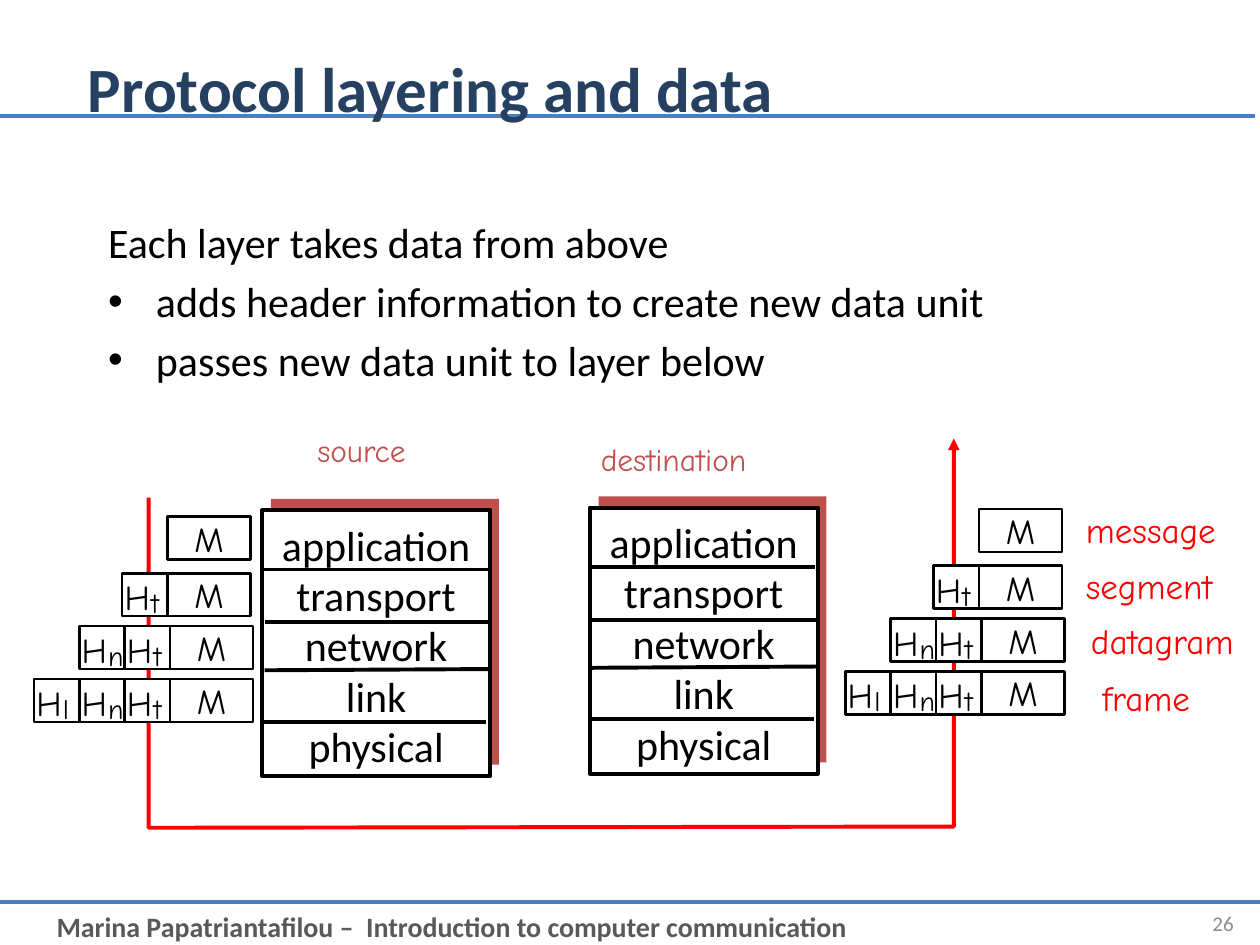
"""Build the slide on protocol layering and data units."""
from lxml.etree import SubElement
from pptx import Presentation
from pptx.dml.color import RGBColor
from pptx.enum.shapes import MSO_CONNECTOR, MSO_SHAPE
from pptx.enum.text import MSO_ANCHOR, PP_ALIGN
from pptx.oxml.ns import qn
from pptx.util import Inches, Pt

COLORS = {
    "rule": "4B7EBC", "title": "254061", "footer": "595959", "number": "8C8C8C",
    "black": "000000", "white": "FFFFFF", "accent": "C0504D", "flow": "FF0000",
}
BODY_FONT, HAND_FONT = "Calibri", "Comic Neue"
LAYERS = ["application", "transport", "network", "link", "physical"]
DIVIDERS = [(0, 0.47, 1.79, 0.47), (0.02, 0.89, 1.82, 0.89),
            (0.02, 1.27, 1.82, 1.26), (0, 1.68, 1.78, 1.68)]
DATA_UNITS = [(0, 0, ""), (0, 0.45, "t"), (0.02, 0.87, "tn"), (0.02, 1.29, "tnl")]
UNIT_NAMES = [("message", 8.52, 3.99), ("segment", 8.52, 4.43),
              ("datagram", 8.56, 4.87), ("frame", 8.65, 5.32)]
HEADER_WIDTH, PAYLOAD_WIDTH, CELL_HEIGHT = 0.36, 0.66, 0.34


def rgb(color):
    return RGBColor.from_string(COLORS[color])


def write(frame, lines, size, color, font=BODY_FONT, bold=False,
          align=PP_ALIGN.LEFT, anchor=MSO_ANCHOR.TOP, wrap=True):
    """Fill a text frame with one paragraph per line."""
    frame.word_wrap = wrap
    frame.vertical_anchor = anchor
    for index, line in enumerate(lines):
        paragraph = frame.add_paragraph() if index else frame.paragraphs[0]
        paragraph.text = line
        paragraph.alignment = align
        paragraph.font.size = Pt(size)
        paragraph.font.name = font
        paragraph.font.bold = bold
        paragraph.font.color.rgb = rgb(color)


def add_text(shapes, box, lines, size, color, **style):
    label = shapes.add_textbox(*map(Inches, box))
    write(label.text_frame, lines, size, color, **style)
    return label


def add_box(shapes, box, fill, line_width=None):
    rectangle = shapes.add_shape(MSO_SHAPE.RECTANGLE, *map(Inches, box))
    rectangle.shadow.inherit = False
    rectangle.fill.solid()
    rectangle.fill.fore_color.rgb = rgb(fill)
    if line_width:
        rectangle.line.color.rgb = rgb("black")
        rectangle.line.width = Pt(line_width)
    else:
        rectangle.line.fill.background()
    return rectangle


def add_line(shapes, ends, color):
    rule = shapes.add_connector(MSO_CONNECTOR.STRAIGHT, *map(Inches, ends))
    rule.line.color.rgb = rgb(color)
    rule.line.width = Pt(2.25)
    SubElement(rule._element.spPr, qn("a:effectLst"))


def add_body(shapes):
    body = add_text(shapes, (0.76, 1.67, 8.5, 1.66), [
        "Each layer takes data from above",
        "adds header information to create new data unit",
        "passes new data unit to layer below",
    ], 24, "black")
    for index, paragraph in enumerate(body.text_frame.paragraphs):
        paragraph.space_before = Pt(4.8)
        properties = paragraph._p.get_or_add_pPr()
        properties.set("marL", str(Inches(0.38)))
        properties.set("indent", str(Inches(-0.38)))
        if index:
            SubElement(properties, qn("a:buFont")).set("typeface", "Arial")
            SubElement(properties, qn("a:buChar")).set("char", "•")
            defaults = properties.find(qn("a:defRPr"))
            if defaults is not None:
                properties.append(defaults)


def add_stack(slide, left, top):
    """Draw the five protocol layers of one host."""
    shapes = slide.shapes.add_group_shape().shapes
    add_box(shapes, (left + 0.07, top - 0.09, 1.81, 2.11), "accent")
    add_box(shapes, (left, top, 1.81, 2.11), "white", 2.25)
    for x1, y1, x2, y2 in DIVIDERS:
        add_line(shapes, (left + x1, top + y1, left + x2, top + y2), "black")
    add_text(shapes, (left + 0.05, top + 0.02, 1.71, 2.12), LAYERS, 24, "black",
             align=PP_ALIGN.CENTER, wrap=False)


def add_header(shapes, left, top, subscript):
    add_box(shapes, (left, top, HEADER_WIDTH, CELL_HEIGHT), "white", 1.5)
    add_text(shapes, (left - 0.08, top - 0.03, 0.34, 0.43), ["H"], 20, "black",
             font=HAND_FONT)
    add_text(shapes, (left + 0.13, top + 0.05, 0.32, 0.37), [subscript], 16, "black",
             font=HAND_FONT)


def add_data_units(slide, left, top):
    """Draw the message with the headers that each layer puts before it."""
    shapes = slide.shapes.add_group_shape().shapes
    for dx, dy, _ in DATA_UNITS:
        payload = add_box(shapes, (left + dx, top + dy, PAYLOAD_WIDTH, CELL_HEIGHT),
                          "white", 1.5)
        write(payload.text_frame, ["M"], 20, "black", font=HAND_FONT,
              align=PP_ALIGN.CENTER, anchor=MSO_ANCHOR.MIDDLE, wrap=False)
    for dx, dy, headers in DATA_UNITS:
        for count, subscript in enumerate(headers, 1):
            add_header(shapes, left + dx - count * HEADER_WIDTH, top + dy, subscript)


def add_flow(shapes):
    """Draw the way of the data down the source and up the destination."""
    start, *bends = [(Inches(x), Inches(y)) for x, y in
                     [(1.18, 3.95), (1.18, 6.57), (7.57, 6.56), (7.57, 3.48)]]
    builder = shapes.build_freeform(*start)
    builder.add_line_segments(bends, close=False)
    flow = builder.convert_to_shape()
    flow.shadow.inherit = False
    flow.fill.background()
    flow.line.color.rgb = rgb("flow")
    flow.line.width = Pt(2.25)
    SubElement(flow.line._get_or_add_ln(), qn("a:tailEnd")).set("type", "triangle")


def main():
    presentation = Presentation()
    presentation.slide_width, presentation.slide_height = Inches(10), Inches(7.5)
    slide = presentation.slides.add_slide(presentation.slide_layouts[6])
    shapes = slide.shapes

    add_line(shapes, (0, 7.16, 10, 7.16), "rule")
    add_text(shapes, (0.35, 7.17, 9.25, 0.37),
             ["Marina Papatriantafilou –  Introduction to computer communication"],
             16, "footer", bold=True)
    add_line(shapes, (-0.04, 0.92, 9.96, 0.92), "rule")
    add_text(shapes, (9.09, 7.13, 0.8, 0.4), ["26"], 12, "number",
             align=PP_ALIGN.RIGHT, anchor=MSO_ANCHOR.MIDDLE)
    add_text(shapes, (0.6, 0.31, 8.5, 0.77), ["Protocol layering and data"],
             36, "title", bold=True, anchor=MSO_ANCHOR.MIDDLE)
    add_body(shapes)

    add_stack(slide, 2.08, 4.05)
    add_stack(slide, 4.68, 4.03)
    add_text(shapes, (2.42, 3.37, 1.23, 0.5), ["source"], 18, "accent", font=HAND_FONT)
    add_text(shapes, (4.67, 3.44, 1.94, 0.5), ["destination"], 18, "accent",
             font=HAND_FONT)
    add_flow(shapes)
    add_data_units(slide, 1.33, 4.1)
    add_data_units(slide, 7.77, 4.04)
    for name, left, top in UNIT_NAMES:
        add_text(shapes, (left, top, 1.42, 0.43), [name], 20, "flow", font=HAND_FONT)

    presentation.save("out.pptx")


if __name__ == "__main__":
    main()
